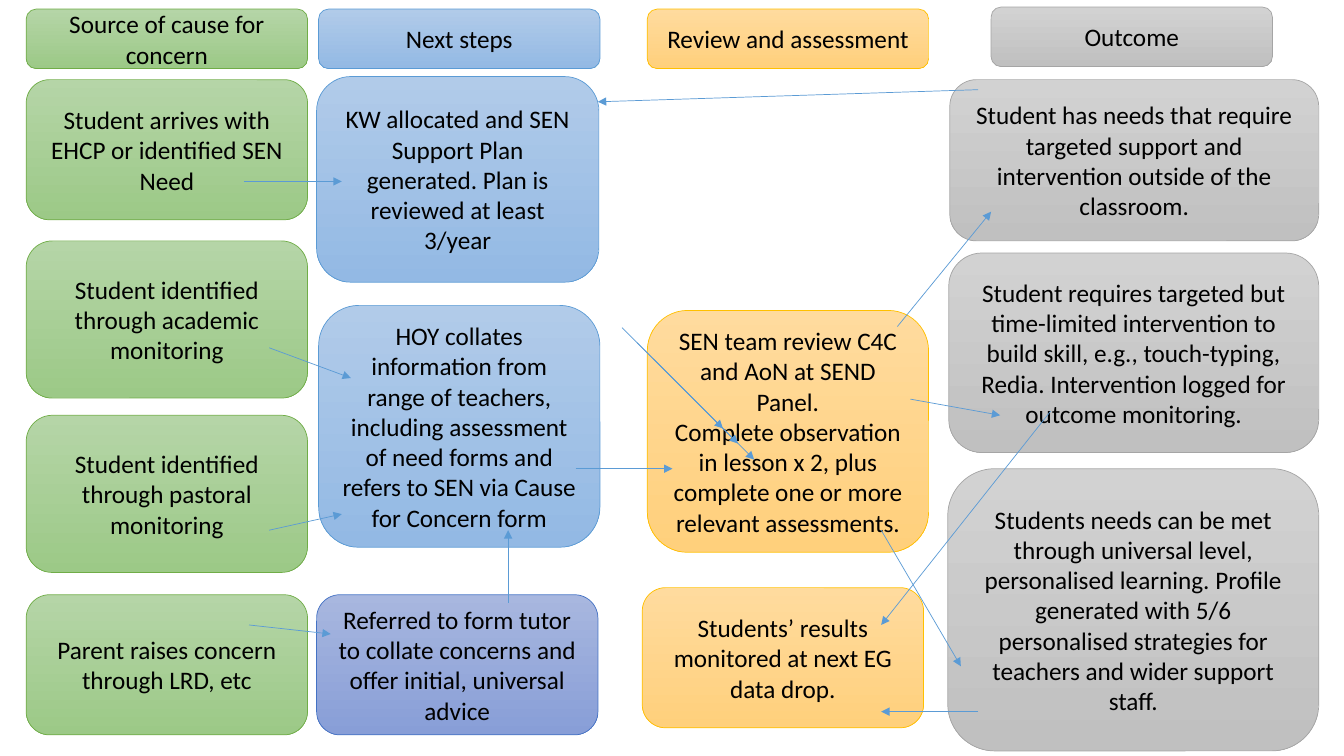
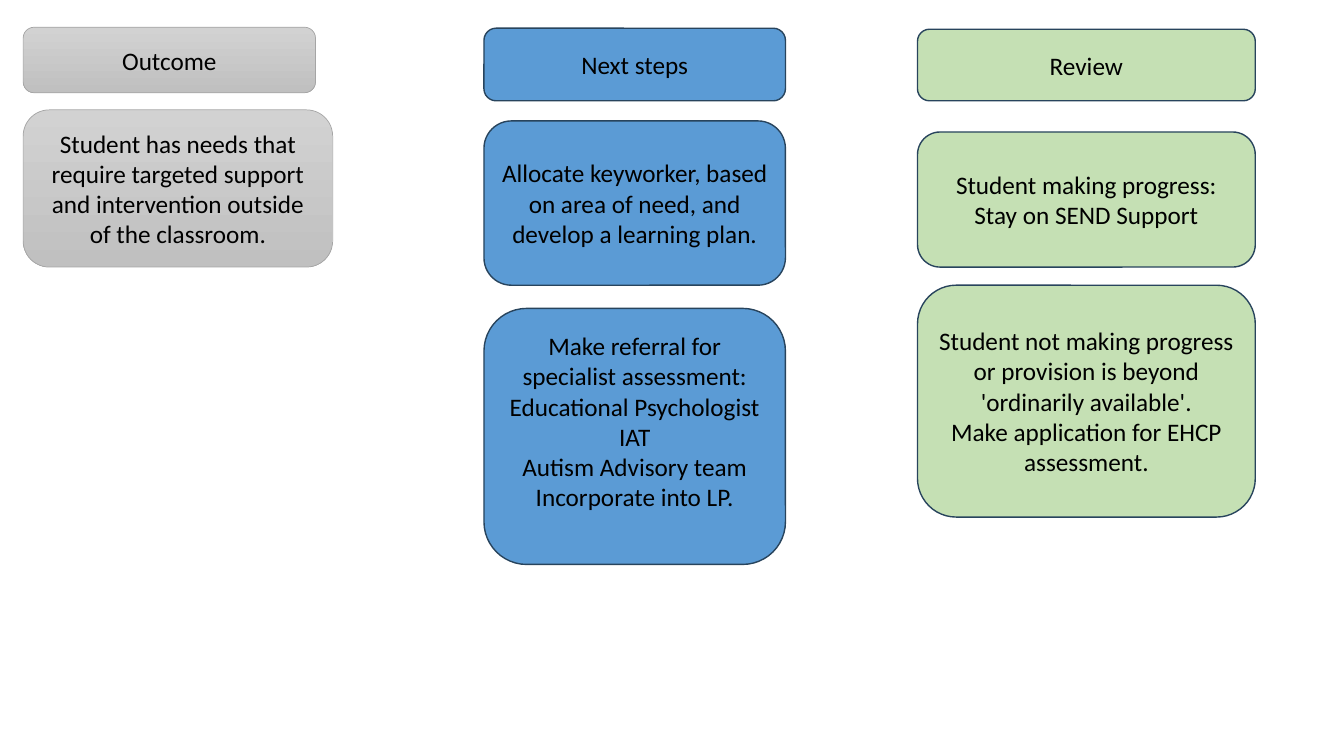
import pptx
import pptx.dml.color
import pptx.enum.shapes
import pptx.enum.text
import pptx.oxml
import pptx.util

RGBColor = pptx.dml.color.RGBColor
PX = 9144  # EMU in one px, 100 px to the inch

BLACK = RGBColor(0x00, 0x00, 0x00)
ARROW_BLUE = RGBColor(0x5B, 0x9B, 0xD5)
SOLID_BLUE = RGBColor(0x5B, 0x9B, 0xD5)
SOLID_GREEN = RGBColor(0xC5, 0xE0, 0xB4)
NAVY = RGBColor(0x28, 0x44, 0x5D)

# Each style: fill colours from top to bottom, line colour, line width in points
GREEN = ((RGBColor(0xB5, 0xD5, 0xA7), RGBColor(0x9C, 0xC9, 0x87)), RGBColor(0x70, 0xAD, 0x47), 0.5)
BLUE = ((RGBColor(0xB1, 0xCB, 0xE9), RGBColor(0x93, 0xB9, 0xE4)), RGBColor(0x5B, 0x9B, 0xD5), 0.5)
INDIGO = ((RGBColor(0xA8, 0xB7, 0xDF), RGBColor(0x88, 0x9E, 0xD7)), RGBColor(0x44, 0x72, 0xC4), 0.5)
GOLD = ((RGBColor(0xFF, 0xDB, 0x9E), RGBColor(0xFF, 0xD0, 0x7C)), RGBColor(0xFF, 0xC0, 0x00), 0.5)
GREY = ((RGBColor(0xD2, 0xD2, 0xD2), RGBColor(0xC0, 0xC0, 0xC0)), RGBColor(0xA5, 0xA5, 0xA5), 0.5)
FLAT_BLUE = ((SOLID_BLUE,), NAVY, 1)
FLAT_GREEN = ((SOLID_GREEN,), NAVY, 1)

FONT_FORMAT = {"name": "Calibri", "size": pptx.util.Pt(18)}
FRAME_FORMAT = {"word_wrap": True, "vertical_anchor": pptx.enum.text.MSO_ANCHOR.MIDDLE}
TARGETED_SUPPORT = "Student has needs that require targeted support and intervention outside of the classroom."


def add_box(slide, style, bounds, text):
    """Add a rounded box; each line of the text becomes a paragraph."""
    fill_colours, line_colour, line_width = style
    shape = slide.shapes.add_shape(
        pptx.enum.shapes.MSO_SHAPE.ROUNDED_RECTANGLE, *(value * PX for value in bounds))
    shape.shadow.inherit = False
    if len(fill_colours) == 1:
        shape.fill.solid()
        shape.fill.fore_color.rgb = fill_colours[0]
    else:
        shape.fill.gradient()
        shape.fill.gradient_angle = 270
        for stop, colour in zip(shape.fill.gradient_stops, fill_colours):
            stop.color.rgb = colour
    shape.line.color.rgb = line_colour
    shape.line.width = pptx.util.Pt(line_width)
    frame = shape.text_frame
    frame.text = text
    for name, value in FRAME_FORMAT.items():
        setattr(frame, name, value)
    for paragraph in frame.paragraphs:
        paragraph.alignment = pptx.enum.text.PP_ALIGN.CENTER
        for run in paragraph.runs:
            run.font.color.rgb = BLACK
            for name, value in FONT_FORMAT.items():
                setattr(run.font, name, value)
    return shape


def add_arrow(slide, ends):
    connector = slide.shapes.add_connector(
        pptx.enum.shapes.MSO_CONNECTOR.STRAIGHT, *(value * PX for value in ends))
    connector.line.color.rgb = ARROW_BLUE
    connector.line.width = pptx.util.Pt(0.5)
    namespace = pptx.oxml.ns.nsdecls("a")
    connector.line._get_or_add_ln().append(
        pptx.oxml.parse_xml(f'<a:tailEnd {namespace} type="triangle"/>'))
    connector._element.spPr.append(pptx.oxml.parse_xml(f"<a:effectLst {namespace}/>"))


presentation = pptx.Presentation()
presentation.slide_width = 1333 * PX
presentation.slide_height = 750 * PX
blank_layout = presentation.slide_layouts[6]

# Slide 1: from cause for concern to outcome
concern_slide = presentation.slides.add_slide(blank_layout)
concern_boxes = [
    (GREEN, (26, 9, 279, 59), "Source of cause for concern"),
    (GREEN, (26, 79, 279, 139), "Student arrives with EHCP or identified SEN Need"),
    (GREEN, (26, 239, 279, 156), "Student identified through academic monitoring"),
    (GREEN, (26, 412, 279, 156), "Student identified through pastoral monitoring"),
    (GREEN, (26, 590, 279, 139), "Parent raises concern through LRD, etc"),
    (BLUE, (316, 9, 279, 59), "Next steps"),
    (BLUE, (314, 76, 280, 204),
     "KW allocated and SEN Support Plan generated. Plan is reviewed at least 3/year"),
    (BLUE, (316, 303, 279, 240),
     "HOY collates information from range of teachers, including assessment of need forms "
     "and refers to SEN via Cause for Concern form"),
    (INDIGO, (314, 590, 279, 139),
     "Referred to form tutor to collate concerns and offer initial, universal advice"),
    (GOLD, (642, 9, 279, 59), "Review and assessment"),
    (GOLD, (642, 308, 279, 240),
     "SEN team review C4C and AoN at SEND Panel.\n"
     "Complete observation in lesson x 2, plus complete one or more relevant assessments."),
    (GOLD, (637, 583, 279, 139), "Students’ results monitored at next EG data drop."),
    (GREY, (983, 7, 279, 59), "Outcome"),
    (GREY, (942, 79, 366, 160), TARGETED_SUPPORT),
    (GREY, (941, 251, 367, 198),
     "Student requires targeted but time-limited intervention to build skill, e.g., "
     "touch-typing, Redia. Intervention logged for outcome monitoring."),
    (GREY, (940, 465, 368, 280),
     "Students needs can be met through universal level, personalised learning. Profile "
     "generated with 5/6 personalised strategies for teachers and wider support staff."),
]
for style, bounds, text in concern_boxes:
    add_box(concern_slide, style, bounds, text)

arrows = [
    (242, 180, 339, 180),
    (267, 345, 348, 375),
    (267, 526, 339, 510),
    (247, 620, 328, 629),
    (504, 598, 504, 526),
    (571, 465, 667, 465),
    (890, 324, 983, 210),
    (903, 396, 992, 412),
    (874, 526, 953, 661),
    (970, 89, 593, 101),
    (1042, 408, 874, 620),
    (970, 706, 874, 706),
]
arrows += [(617 + shift, 325 + shift, 717 + shift, 425 + shift) for shift in (0, 15, 31)]
for ends in arrows:
    add_arrow(concern_slide, ends)

# Slide 2: from outcome to review
outcome_slide = presentation.slides.add_slide(blank_layout)
outcome_boxes = [
    (GREY, (23, 27, 290, 65), "Outcome"),
    (GREY, (23, 109, 307, 156), TARGETED_SUPPORT),
    (FLAT_BLUE, (480, 28, 299, 72), "Next steps"),
    (FLAT_BLUE, (480, 120, 299, 163),
     "Allocate keyworker, based on area of need, and develop a learning plan."),
    (FLAT_GREEN, (910, 29, 335, 71), "Review"),
    (FLAT_GREEN, (910, 131, 335, 134), "Student making progress:\nStay on SEND Support"),
    (FLAT_GREEN, (910, 283, 335, 230),
     "Student not making progress or provision is beyond 'ordinarily available'.\n"
     "Make application for EHCP assessment."),
]
for style, bounds, text in outcome_boxes:
    add_box(outcome_slide, style, bounds, text)

referral_box = add_box(
    outcome_slide, FLAT_BLUE, (480, 306, 299, 254),
    "Make referral for specialist assessment:\nEducational Psychologist\nIAT\n"
    "Autism Advisory team\nIncorporate into LP.")
referral_box.text_frame.margin_bottom = 35 * PX

presentation.save("out.pptx")
